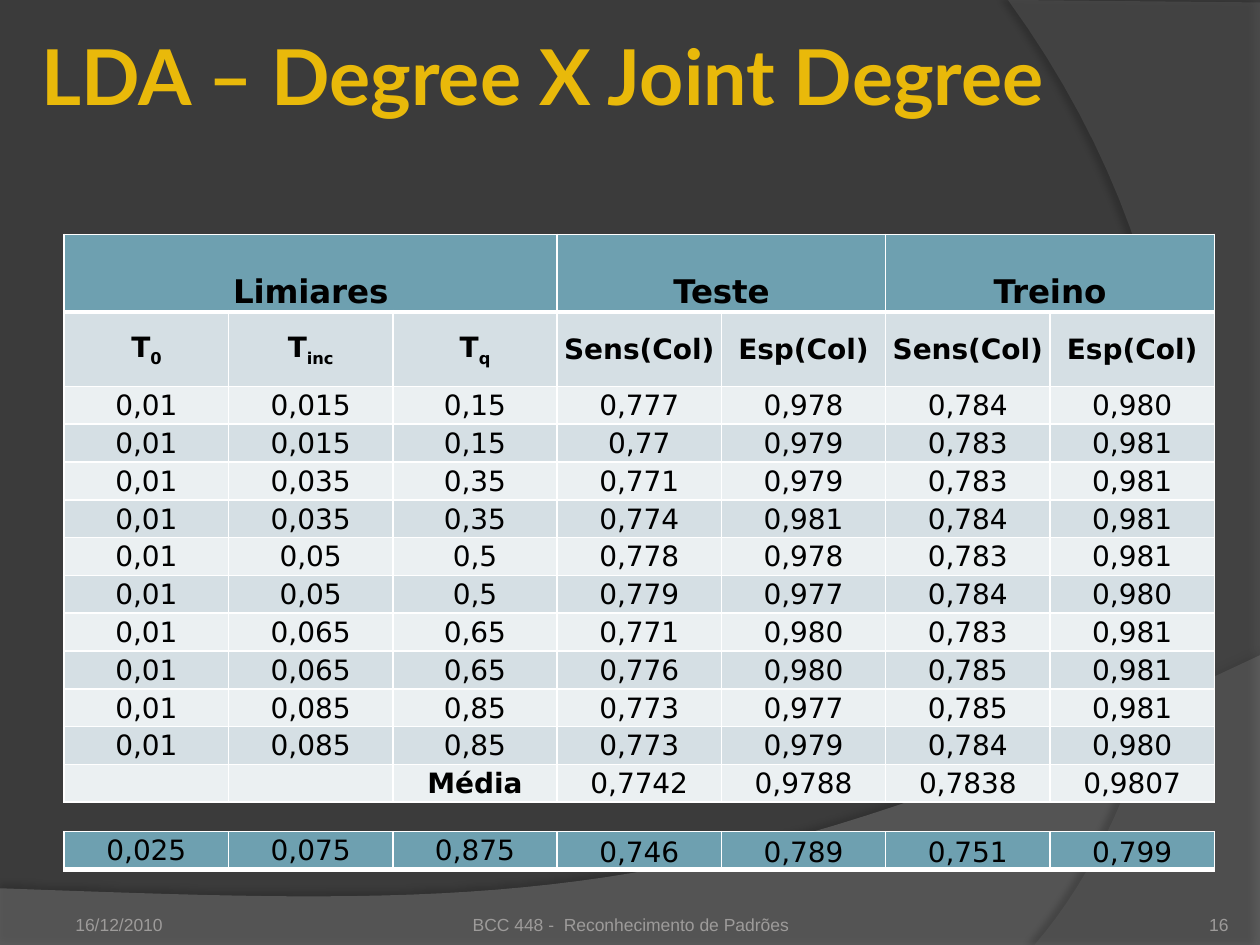
from lxml import etree
from pptx import Presentation
from pptx.dml.color import RGBColor
from pptx.enum.text import MSO_ANCHOR, PP_ALIGN
from pptx.oxml import parse_xml
from pptx.oxml.ns import nsdecls, qn
from pptx.util import Emu, Inches, Pt

LEFT, CENTER, RIGHT = PP_ALIGN.LEFT, PP_ALIGN.CENTER, PP_ALIGN.RIGHT
MIDDLE, BOTTOM = MSO_ANCHOR.MIDDLE, MSO_ANCHOR.BOTTOM

BACKGROUND = RGBColor(0x3B, 0x3B, 0x3B)
WAVE = RGBColor(0x7F, 0x7F, 0x7F)
ARC = RGBColor(0x5E, 0x5E, 0x5E)
FOOTER = RGBColor(0x9D, 0x9B, 0x9A)
HEADER = RGBColor(0x6E, 0xA0, 0xB0)
DARK_BAND = RGBColor(0xD5, 0xDF, 0xE4)
LIGHT_BAND = RGBColor(0xEB, 0xF0, 0xF2)
BLACK = RGBColor(0, 0, 0)
WHITE = RGBColor(0xFF, 0xFF, 0xFF)
TITLE_STOPS = [
    (0, RGBColor(0xFF, 0xDC, 0x75)),
    (75, RGBColor(0xE9, 0xB9, 0x0A)),
    (100, RGBColor(0x9E, 0x87, 0x00)),
]

SLIDE_WIDTH, SLIDE_HEIGHT = 10, 7.5
TABLE_LEFT, TABLE_WIDTH, COLUMNS = 0.51, 9.13, 7
ROW = 0.3

GROUPS = [("Limiares", 0, 2), ("Teste", 3, 4), ("Treino", 5, 6)]
HEADINGS = ["T_0", "T_inc", "T_q"] + ["Sens(Col)", "Esp(Col)"] * 2
RESULTS = [line.split() for line in """\
0,01 0,015 0,15 0,777 0,978 0,784 0,980
0,01 0,015 0,15 0,77 0,979 0,783 0,981
0,01 0,035 0,35 0,771 0,979 0,783 0,981
0,01 0,035 0,35 0,774 0,981 0,784 0,981
0,01 0,05 0,5 0,778 0,978 0,783 0,981
0,01 0,05 0,5 0,779 0,977 0,784 0,980
0,01 0,065 0,65 0,771 0,980 0,783 0,981
0,01 0,065 0,65 0,776 0,980 0,785 0,981
0,01 0,085 0,85 0,773 0,977 0,785 0,981
0,01 0,085 0,85 0,773 0,979 0,784 0,980""".splitlines()]
AVERAGES = ["", "", "Média", "0,7742", "0,9788", "0,7838", "0,9807"]
JOINT_DEGREE = ["0,025", "0,075", "0,875", "0,746", "0,789", "0,751", "0,799"]


def bezier(start, control_a, control_b, end, steps=40):
    """Return points along a cubic curve, without its start."""
    points = []
    for step in range(1, steps + 1):
        t = step / steps
        weights = ((1 - t) ** 3, 3 * t * (1 - t) ** 2, 3 * t * t * (1 - t), t ** 3)
        corners = (start, control_a, control_b, end)
        points.append(tuple(sum(w * c[axis] for w, c in zip(weights, corners)) for axis in (0, 1)))
    return points


def add_swoosh(slide, points, color, opacity, shadow):
    """Draw a translucent outline with a soft shadow."""
    builder = slide.shapes.build_freeform(
        Inches(points[0][0]), Inches(points[0][1]))
    builder.add_line_segments([(Inches(x), Inches(y)) for x, y in points[1:]])
    shape = builder.convert_to_shape()
    shape.fill.solid()
    shape.fill.fore_color.rgb = color
    shape.line.fill.background()
    properties = shape._element.spPr
    fill_color = properties.find(qn("a:solidFill"))[0]
    etree.SubElement(fill_color, qn("a:alpha"), val=str(opacity * 1000))
    darkness, blur, distance, angle = shadow
    properties.append(parse_xml(
        f'<a:effectLst {nsdecls("a")}><a:outerShdw blurRad="{Pt(blur)}" dist="{Pt(distance)}" '
        f'dir="{angle * 60000}" algn="ctr" rotWithShape="0"><a:srgbClr val="{BLACK}">'
        f'<a:alpha val="{darkness * 1000}"/></a:srgbClr></a:outerShdw></a:effectLst>'))


def format_run(run, font_name, size, color, bold=False, baseline=0):
    """Set the look of one run."""
    font = run.font
    font.name, font.size, font.bold = font_name, Pt(size), bold
    font.color.rgb = color
    if baseline:
        font._element.set("baseline", str(baseline * 1000))


def add_text(slide, text, box, margins, anchor, align):
    """Add a text box and return its only run."""
    frame = slide.shapes.add_textbox(*map(Inches, box)).text_frame
    frame.word_wrap = True
    frame.vertical_anchor = anchor
    (frame.margin_left, frame.margin_top,
     frame.margin_right, frame.margin_bottom) = map(Inches, margins)
    frame.text = text
    frame.paragraphs[0].alignment = align
    return frame.paragraphs[0].runs[0]


def add_title(slide, text):
    """Add the gold gradient title."""
    run = add_text(slide, text, (0.28, -0.03, 9.45, 1.25), [0.05] * 4, MIDDLE, LEFT)
    format_run(run, "Lato", 44, TITLE_STOPS[1][1], bold=True)
    stops = "".join(f'<a:gs pos="{share * 1000}"><a:srgbClr val="{color}"/></a:gs>'
                    for share, color in TITLE_STOPS)
    solid = run.font._element.find(qn("a:solidFill"))
    solid.getparent().replace(solid, parse_xml(
        f'<a:gradFill {nsdecls("a")}><a:gsLst>{stops}</a:gsLst><a:lin ang="5400000"/></a:gradFill>'))


def add_footer(slide, text, left, width, side_margin, top_margin, align):
    """Add one small grey text at the foot of the slide."""
    run = add_text(slide, text, (left, 7.02, width, 0.4),
                   (side_margin, top_margin, side_margin, 0), BOTTOM, align)
    format_run(run, "Arial", 10, FOOTER)


def set_borders(cell, bottom_width):
    """Give a cell white borders."""
    properties = cell._tc.get_or_add_tcPr()
    widths = {"lnL": 1, "lnR": 1, "lnT": 1, "lnB": bottom_width}
    for index, (side, width) in enumerate(widths.items()):
        properties.insert(index, parse_xml(
            f'<a:{side} {nsdecls("a")} w="{Pt(width)}"><a:solidFill>'
            f'<a:srgbClr val="{WHITE}"/></a:solidFill></a:{side}>'))


def fill_cell(cell, text, color, size=16, bold=False, baseline=0, anchor=MIDDLE, bottom_width=1):
    """Write a cell; the part after an underscore is a subscript."""
    cell.fill.solid()
    cell.fill.fore_color.rgb = color
    cell.vertical_anchor = anchor
    cell.margin_left = cell.margin_top = cell.margin_right = Inches(0.01)
    cell.margin_bottom = 0
    set_borders(cell, bottom_width)
    paragraph = cell.text_frame.paragraphs[0]
    paragraph.alignment = CENTER
    for index, part in enumerate(text.split("_") if text else []):
        run = paragraph.add_run()
        run.text = part
        format_run(run, "DejaVu Sans", size, BLACK, bold, -25 if index else baseline)
    if not text:
        paragraph._p.get_or_add_endParaRPr().set("sz", str(size * 100))


def add_plain_table(slide, top, heights):
    """Add an unstyled table of equal columns."""
    frame = slide.shapes.add_table(len(heights), COLUMNS, Inches(TABLE_LEFT), Inches(top),
                                   Inches(TABLE_WIDTH), Inches(sum(heights)))
    table = frame.table
    table.first_row = table.horz_banding = False
    for column in table.columns:
        column.width = Emu(Inches(TABLE_WIDTH) // COLUMNS)
    for row, height in zip(table.rows, heights):
        row.height = Inches(height)
    return table


def add_results_table(slide):
    """Add the table of thresholds, test and training scores."""
    body = [HEADINGS, *RESULTS, AVERAGES]
    table = add_plain_table(slide, 1.86, [0.59, 0.59] + [ROW] * (len(body) - 1))
    for name, first, last in GROUPS:
        for column in range(first, last + 1):
            fill_cell(table.cell(0, column), name if column == first else "", HEADER,
                      size=32, bold=True, baseline=-25, bottom_width=3)
        table.cell(0, first).merge(table.cell(0, last))
    for row, values in enumerate(body, start=1):
        band = DARK_BAND if row % 2 else LIGHT_BAND
        for column, value in enumerate(values):
            fill_cell(table.cell(row, column), value, band,
                      bold=values is HEADINGS or value == "Média")


def add_joint_degree_table(slide):
    """Add the single row of joint degree scores."""
    table = add_plain_table(slide, 6.6, [ROW])
    for column, value in enumerate(JOINT_DEGREE):
        fill_cell(table.cell(0, column), value, HEADER,
                  anchor=MIDDLE if column < 3 else BOTTOM, bottom_width=3)


def main():
    """Build the slide and save it."""
    presentation = Presentation()
    presentation.slide_width, presentation.slide_height = Inches(SLIDE_WIDTH), Inches(SLIDE_HEIGHT)
    slide = presentation.slides.add_slide(presentation.slide_layouts[6])
    slide.background.fill.solid()
    slide.background.fill.fore_color.rgb = BACKGROUND
    wave = [(0, 7.05), (0, 7.51), (10, 7.51), (10, 5.2)]
    wave += bezier((10, 5.2), (5.59, 7.29), (3.91, 7.19), (0, 7.05))
    add_swoosh(slide, wave, WAVE, 45, (35, 4, 3.5, 270))
    arc = [(10, 0.02), (10, 7.5), (8.21, 7.5)]
    arc += bezier((8.21, 7.5), (9.35, 6.19), (10.18, 3), (8, 0)) + [(10, 0.02)]
    add_swoosh(slide, arc, ARC, 40, (45, 4, 4, 180))
    add_footer(slide, "16/12/2010", 0.5, 2.33, 0.1, 0.05, LEFT)
    add_footer(slide, "BCC 448 -  Reconhecimento de Padrões", 3.42, 3.17, 0, 0.05, CENTER)
    add_title(slide, "LDA – Degree X Joint Degree")
    add_footer(slide, "16", 8.92, 0.83, 0, 0, RIGHT)
    add_results_table(slide)
    add_joint_degree_table(slide)
    presentation.save("out.pptx")


if __name__ == "__main__":
    main()
